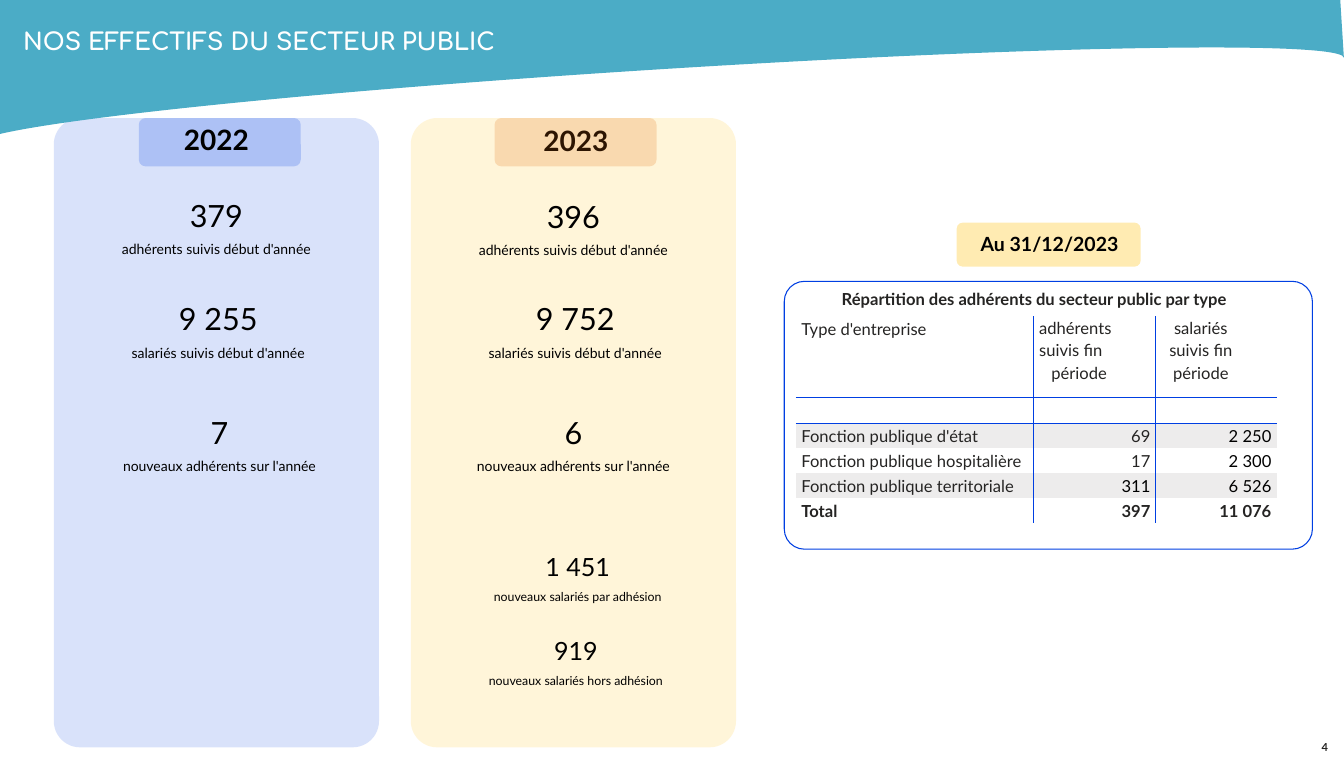
import pptx
import pptx.util
import pptx.dml.color
import pptx.enum.shapes
import pptx.enum.text
import pptx.oxml
import pptx.oxml.ns

PX = 9144
BLUE = pptx.dml.color.RGBColor(0x00, 0x3F, 0xE2)
GOLD = pptx.dml.color.RGBColor(0xFF, 0xC0, 0x00)
ORANGE = pptx.dml.color.RGBColor(0xE4, 0x6C, 0x0A)
TEAL = pptx.dml.color.RGBColor(0x4B, 0xAC, 0xC6)
GREY = pptx.dml.color.RGBColor(0xED, 0xEC, 0xEC)
WHITE = pptx.dml.color.RGBColor(0xFF, 0xFF, 0xFF)
BLACK = pptx.dml.color.RGBColor(0x00, 0x00, 0x00)
INK = pptx.dml.color.RGBColor(0x25, 0x24, 0x23)
SHAPES = pptx.enum.shapes.MSO_SHAPE
LEFT = pptx.enum.text.PP_ALIGN.LEFT
CENTER = pptx.enum.text.PP_ALIGN.CENTER
RIGHT = pptx.enum.text.PP_ALIGN.RIGHT

presentation = pptx.Presentation()
presentation.slide_width = pptx.util.Pt(1583)
presentation.slide_height = pptx.util.Pt(903)
slide = presentation.slides.add_slide(presentation.slide_layouts[6])


def add_rounded(left, top, width, height, radius, colour, opacity):
    shape = slide.shapes.add_shape(SHAPES.ROUNDED_RECTANGLE, left * PX, top * PX, width * PX, height * PX)
    shape.shadow.inherit = False
    shape.adjustments[0] = radius / min(width, height)
    if opacity:
        shape.fill.solid()
        shape.fill.fore_color.rgb = colour
        shape.line.fill.background()
        colour_element = shape.fill._xPr.find(".//" + pptx.oxml.ns.qn("a:srgbClr"))
        colour_element.append(pptx.oxml.parse_xml(
            f'<a:alpha {pptx.oxml.ns.nsdecls("a")} val="{opacity * 1000}"/>'))
    else:
        shape.fill.background()
        shape.line.color.rgb = colour
        shape.line.width = pptx.util.Pt(1.25)


def add_text(left, top, width, height, lines, inset=1, align=LEFT, colour=BLACK, bold=False, font="Lato"):
    box = slide.shapes.add_textbox(left * PX, top * PX, width * PX, height * PX)
    frame = box.text_frame
    frame.word_wrap = True
    frame.margin_left = frame.margin_right = frame.margin_bottom = 0
    frame.margin_top = inset * PX
    for index, (text, size, before) in enumerate(lines):
        paragraph = frame.add_paragraph() if index else frame.paragraphs[0]
        paragraph.alignment = align
        if before:
            paragraph.space_before = pptx.util.Pt(before)
        run = paragraph.add_run()
        run.text = text
        run.font.name = font
        run.font.size = pptx.util.Pt(size)
        run.font.bold = bold
        run.font.color.rgb = colour


add_rounded(672, 193, 532, 1029, 43, GOLD, 15)
add_rounded(88, 193, 532, 1029, 43, BLUE, 15)
add_rounded(227, 193, 265, 79, 11, BLUE, 20)
add_rounded(1283, 460, 864, 438, 33, BLUE, 0)
add_text(1377, 471, 680, 36, [("Répartition des adhérents du secteur public par type", 19.5, 0)],
         inset=2, colour=INK, bold=True)

rows = [
    (["Type d'entreprise"], ["adhérents suivis fin", "période"], ["salariés suivis fin période"]),
    ([], [], []),
    (["Fonction publique d'état"], ["69"], ["2 250"]),
    (["Fonction publique hospitalière"], ["17"], ["2 300"]),
    (["Fonction publique territoriale"], ["311"], ["6 526"]),
    (["Total"], ["397"], ["11 076"]),
]
black_values = ["2 250", "2 300", "311", "6 526"]
table = slide.shapes.add_table(6, 3, 1302 * PX, 517 * PX, 787 * PX, 341 * PX).table
table.first_row = table.horz_banding = False
table._tbl.tblPr.find(pptx.oxml.ns.qn("a:tableStyleId")).text = "{2D5ABB26-0587-4C30-8999-92F81FD0307C}"
for column, width in zip(table.columns, (389, 200, 198)):
    column.width = width * PX
for row, height in zip(table.rows, (133, 42, 41, 41, 41, 41)):
    row.height = height * PX

for row_index, row in enumerate(rows):
    for column_index, texts in enumerate(row):
        cell = table.cell(row_index, column_index)
        header_number = row_index == 0 and column_index > 0
        cell.margin_left = 9 * PX
        cell.margin_right = (60 if header_number else 9) * PX
        cell.margin_top = (0 if header_number or not texts else 4) * PX
        cell.margin_bottom = 0
        cell.fill.solid()
        cell.fill.fore_color.rgb = GREY if row_index in (2, 4) else WHITE
        for index, text in enumerate(texts):
            paragraph = cell.text_frame.add_paragraph() if index else cell.text_frame.paragraphs[0]
            if row_index == 0:
                paragraph.alignment = CENTER if column_index == 2 or index else LEFT
            else:
                paragraph.alignment = RIGHT if column_index else LEFT
            if header_number and index == 0:
                paragraph.line_spacing = 1.11
            if index:
                paragraph.space_before = pptx.util.Pt(2.6)
            run = paragraph.add_run()
            run.text = text
            run.font.name = "Lato"
            run.font.size = pptx.util.Pt(19.5)
            run.font.bold = row_index == 5
            run.font.color.rgb = BLACK if text in black_values else INK
        borders = [
            ("lnL", column_index > 0),
            ("lnR", column_index < 2),
            ("lnT", row_index == 1),
            ("lnB", row_index == 0),
        ]
        visible = [tag for tag, shown in borders if shown]
        for position, tag in enumerate(visible):
            cell._tc.get_or_add_tcPr().insert(position, pptx.oxml.parse_xml(
                f'<a:{tag} {pptx.oxml.ns.nsdecls("a")} w="{pptx.util.Pt(1.5)}">'
                f'<a:solidFill><a:srgbClr val="{BLUE}"/></a:solidFill></a:{tag}>'))

large_figures = [
    (780, 296, 316, "396", "adhérents suivis début d'année"),
    (796, 464, 290, "9 752", "salariés suivis début d'année"),
    (777, 649, 322, "6", "nouveaux adhérents sur l'année"),
    (196, 295, 316, "379", "adhérents suivis début d'année"),
    (212, 464, 290, "9 255", "salariés suivis début d'année"),
    (198, 649, 322, "7", "nouveaux adhérents sur l'année"),
]
for left, top, width, figure, label in large_figures:
    add_text(left, top, width, 128, [(figure, 36, 0), (label, 16.5, 8.5)], inset=27, align=CENTER)

small_figures = [
    (802, 876, 286, "1 451", "nouveaux salariés par adhésion"),
    (794, 1013, 296, "919", "nouveaux salariés hors adhésion"),
]
for left, top, width, figure, label in small_figures:
    add_text(left, top, width, 114, [(figure, 29.5, 0), (label, 14.5, 9.3)], inset=26, align=CENTER)

for left, top, year in ((301, 200, "2022"), (889, 201, "2023")):
    add_text(left, top, 112, 58, [(year, 33, 0)], bold=True)
add_rounded(809, 193, 265, 79, 11, ORANGE, 20)
add_rounded(1565, 364, 301, 72, 10, GOLD, 30)
add_text(1604, 378, 235, 41, [("Au 31/12/2023", 23, 0)], bold=True)
add_text(2162, 1207, 27, 27, [("4", 13, 0)], inset=3, colour=INK, bold=True)

banner = slide.shapes.add_shape(SHAPES.FLOWCHART_STORED_DATA, 916 * PX, -1110 * PX, 308 * PX, 2242 * PX)
banner.rotation = 86.4
banner.shadow.inherit = False
banner.fill.solid()
banner.fill.fore_color.rgb = TEAL
banner.line.fill.background()
add_text(38, 43, 1225, 50, [("NOS EFFECTIFS DU SECTEUR PUBLIC", 28, 0)],
         colour=WHITE, bold=True, font="Comfortaa")

presentation.save("out.pptx")
